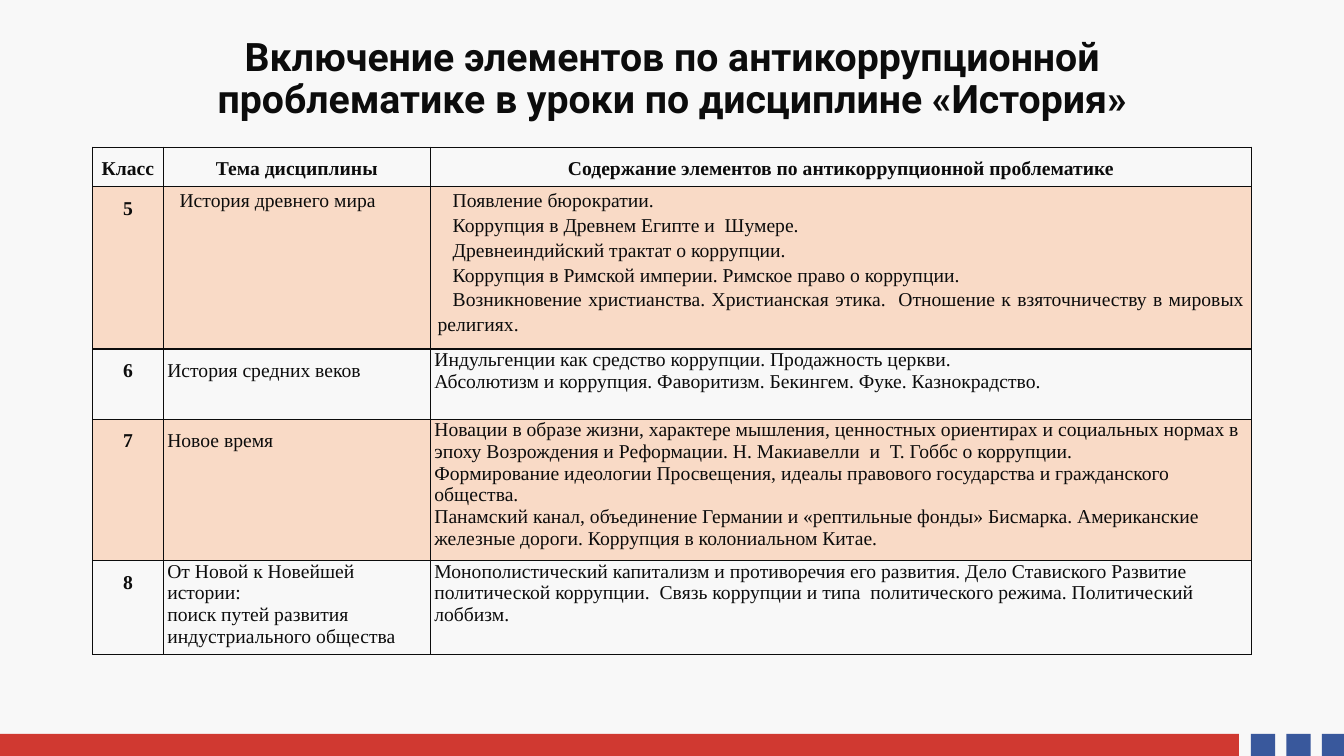
from lxml.etree import SubElement
from pptx import Presentation
from pptx.dml.color import RGBColor
from pptx.enum.shapes import MSO_SHAPE
from pptx.enum.text import MSO_ANCHOR, PP_ALIGN
from pptx.oxml.ns import qn
from pptx.util import Pt

BACKGROUND = RGBColor(0xF8, 0xF8, 0xF8)
INK = RGBColor(0x0C, 0x0C, 0x0C)
RED = RGBColor(0xC7, 0x0A, 0x00)
BLUE = RGBColor(0x0A, 0x30, 0x85)
ORANGE = RGBColor(0xFF, 0x66, 0x00)


def fill_translucent(fill, color, percent):
    fill.solid()
    fill.fore_color.rgb = color
    color_element = fill._xPr.find(qn("a:solidFill"))[0]
    SubElement(color_element, qn("a:alpha"), val=str(percent * 1000))


def add_borders(cell):
    properties = cell._tc.get_or_add_tcPr()
    for position, side in enumerate(("a:lnL", "a:lnR", "a:lnT", "a:lnB")):
        line = properties.makeelement(qn(side), {"w": str(Pt(1))})
        properties.insert(position, line)
        solid = SubElement(line, qn("a:solidFill"))
        SubElement(solid, qn("a:srgbClr"), val=str(INK))


presentation = Presentation()
presentation.slide_width = Pt(960)
presentation.slide_height = Pt(540)
slide = presentation.slides.add_slide(presentation.slide_layouts[6])
slide.background.fill.solid()
slide.background.fill.fore_color.rgb = BACKGROUND

footer = [(0, 885, RED)] + [(893.5 + 25.4 * i, 17.3, BLUE) for i in range(3)]
for left, width, color in footer:
    band = slide.shapes.add_shape(
        MSO_SHAPE.RECTANGLE, Pt(left), Pt(524.2), Pt(width), Pt(15.8))
    band.shadow.inherit = False
    band.line.fill.background()
    fill_translucent(band.fill, color, 80)

title = slide.shapes.add_textbox(Pt(75), Pt(22), Pt(810), Pt(70)).text_frame
title.word_wrap = True
title.vertical_anchor = MSO_ANCHOR.MIDDLE
heading = title.paragraphs[0]
heading.text = ("Включение элементов по антикоррупционной проблематике "
                "в уроки по дисциплине «История»")
heading.alignment = PP_ALIGN.CENTER
heading.line_spacing = 0.9
heading.font.name = "Roboto"
heading.font.size = Pt(28)
heading.font.bold = True
heading.font.color.rgb = INK

LESSONS = [
    (["Класс"], ["Тема дисциплины"],
     ["Содержание элементов по антикоррупционной проблематике"]),
    (["5"], ["История древнего мира"],
     ["Появление бюрократии.",
      "Коррупция в Древнем Египте и  Шумере.",
      "Древнеиндийский трактат о коррупции.",
      "Коррупция в Римской империи. Римское право о коррупции.",
      "Возникновение христианства. Христианская этика.  Отношение к "
      "взяточничеству в мировых религиях."]),
    (["6"], ["История средних веков"],
     ["Индульгенции как средство коррупции. Продажность церкви.",
      "Абсолютизм и коррупция. Фаворитизм. Бекингем. Фуке. Казнокрадство."]),
    (["7"], ["Новое время"],
     ["Новации в образе жизни, характере мышления, ценностных ориентирах и "
      "социальных нормах в эпоху Возрождения и Реформации. Н. Макиавелли  и  "
      "Т. Гоббс о коррупции.",
      "Формирование идеологии Просвещения, идеалы правового государства и "
      "гражданского общества.",
      "Панамский канал, объединение Германии и «рептильные фонды» Бисмарка. "
      "Американские железные дороги. Коррупция в колониальном Китае."]),
    (["8"],
     ["От Новой к Новейшей истории:\n"
      "поиск путей развития индустриального общества"],
     ["Монополистический капитализм и противоречия его развития. Дело "
      "Ставиского Развитие политической коррупции.  Связь коррупции и типа  "
      "политического режима. Политический лоббизм."]),
]
COLUMN_WIDTHS = [50.4, 190.8, 586.8]
ROW_HEIGHTS = [28.2, 106.8, 50.4, 92.8, 62]
FIRST_LINE_INDENTS = [0, 6.5, 10.8]

lessons = slide.shapes.add_table(
    len(LESSONS), len(COLUMN_WIDTHS), Pt(66.2), Pt(105.2),
    Pt(sum(COLUMN_WIDTHS)), Pt(sum(ROW_HEIGHTS))).table
lessons.first_row = False
lessons.horz_banding = False
for column, width in zip(lessons.columns, COLUMN_WIDTHS):
    column.width = Pt(width)

for r, (lesson, height) in enumerate(zip(LESSONS, ROW_HEIGHTS)):
    lessons.rows[r].height = Pt(height)
    for c, texts in enumerate(lesson):
        cell = lessons.cell(r, c)
        justified = r == 1 and c > 0
        centered = r == 0 or c == 0
        cell.margin_left = cell.margin_right = Pt(5.2 if justified else 2.9)
        cell.margin_top = cell.margin_bottom = 0
        if r % 2:
            fill_translucent(cell.fill, ORANGE, 20)
        else:
            cell.fill.background()
        add_borders(cell)
        for i, text in enumerate(texts):
            frame = cell.text_frame
            paragraph = frame.add_paragraph() if i else frame.paragraphs[0]
            paragraph.text = text
            if justified:
                paragraph.alignment = PP_ALIGN.JUSTIFY
                paragraph.line_spacing = 1.15
                indent = Pt(FIRST_LINE_INDENTS[c])
                paragraph._p.get_or_add_pPr().set("indent", str(indent))
            else:
                paragraph.alignment = PP_ALIGN.CENTER if centered else PP_ALIGN.LEFT
                tall = centered or (c == 1 and r < 4)
                paragraph.line_spacing = 1.5 if tall else 1.0
            paragraph.font.name = "Times New Roman"
            paragraph.font.size = Pt(14)
            paragraph.font.bold = centered
            paragraph.font.color.rgb = INK

presentation.save("out.pptx")
